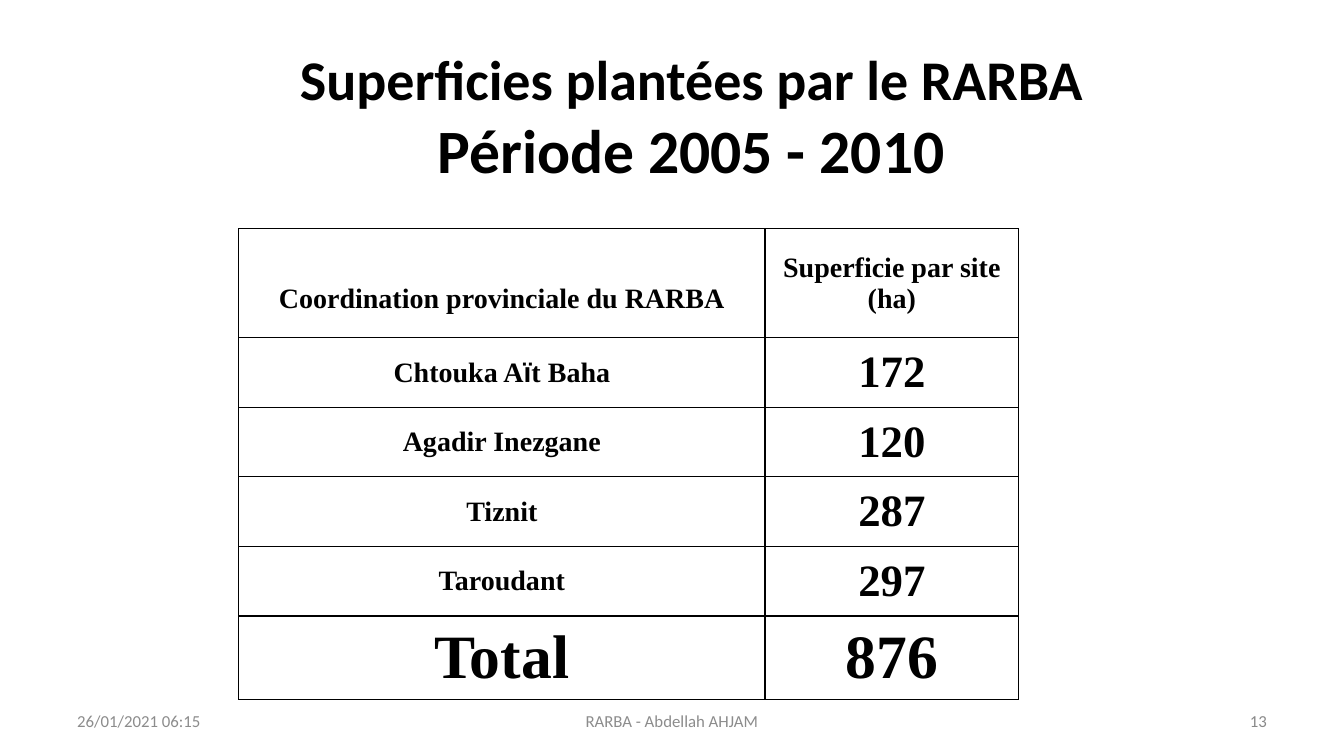
from dataclasses import dataclass

import pptx
import pptx.dml.color
import pptx.enum.text
import pptx.oxml
import pptx.oxml.ns
import pptx.slide
import pptx.table
import pptx.text.text
import pptx.util

Pt = pptx.util.Pt
RGBColor = pptx.dml.color.RGBColor
PP_ALIGN = pptx.enum.text.PP_ALIGN
MSO_ANCHOR = pptx.enum.text.MSO_ANCHOR

BLACK = RGBColor(0x00, 0x00, 0x00)
WHITE = RGBColor(0xFF, 0xFF, 0xFF)
DATE_GREY = RGBColor(0x8C, 0x8C, 0x8C)
NUMBER_GREY = RGBColor(0x89, 0x89, 0x89)

SERIF = "Times New Roman"
SANS = "Calibri"
COLUMN_WIDTHS = (375.8, 181.4)
EMPTY_LINE = 23


@dataclass
class Line:
    text: str
    size: float
    bold: bool = False
    color: RGBColor = BLACK


@dataclass
class TextBlock:
    left: float
    top: float
    width: float
    height: float
    align: PP_ALIGN
    lines: list[Line]


@dataclass
class AreaRow:
    site: str
    area: str
    site_size: float = 20
    area_size: float = 32
    height: float = 49.7


TEXT_BLOCKS = [
    TextBlock(170.6, 28.1, 646.6, 108.7, PP_ALIGN.CENTER, [
        Line("Superficies plantées par le RARBA", 40, True),
        Line("Période 2005 - 2010", 44, True),
    ]),
    TextBlock(48, 500.4, 224, 28.8, PP_ALIGN.LEFT,
              [Line("26/01/2021 06:15", 12, color=DATE_GREY)]),
    TextBlock(688, 500.4, 224, 28.8, PP_ALIGN.RIGHT,
              [Line("13", 12, color=NUMBER_GREY)]),
    TextBlock(328, 500.4, 304, 28.8, PP_ALIGN.CENTER,
              [Line("RARBA - Abdellah AHJAM", 12, color=DATE_GREY)]),
]

AREA_ROWS = [
    AreaRow("Coordination provinciale du RARBA", "Superficie par site (ha)",
            area_size=20, height=77.8),
    AreaRow("Chtouka Aït Baha", "172"),
    AreaRow("Agadir Inezgane", "120"),
    AreaRow("Tiznit", "287"),
    AreaRow("Taroudant", "297"),
    AreaRow("Total", "876", site_size=44, area_size=44, height=59.8),
]


def style_paragraph(paragraph: pptx.text.text._Paragraph, line: Line,
                    font_name: str, align: PP_ALIGN) -> None:
    paragraph.alignment = align
    paragraph.font.name = font_name
    paragraph.font.size = Pt(line.size)
    paragraph.font.bold = line.bold
    paragraph.font.color.rgb = line.color


def add_text_block(slide: pptx.slide.Slide, block: TextBlock) -> None:
    frame = slide.shapes.add_textbox(
        Pt(block.left), Pt(block.top), Pt(block.width), Pt(block.height)).text_frame
    frame.word_wrap = True
    frame.vertical_anchor = MSO_ANCHOR.MIDDLE
    for index, line in enumerate(block.lines):
        paragraph = frame.add_paragraph() if index else frame.paragraphs[0]
        paragraph.add_run().text = line.text
        style_paragraph(paragraph, line, SANS, block.align)


def add_borders(cell: pptx.table._Cell) -> None:
    """Draw a thin black line on the four sides; call before filling the cell."""
    properties = cell._tc.get_or_add_tcPr()
    for side in ("lnL", "lnR", "lnT", "lnB"):
        properties.append(pptx.oxml.parse_xml(
            f'<a:{side} {pptx.oxml.ns.nsdecls("a")} w="{Pt(1)}"><a:solidFill>'
            f'<a:srgbClr val="{BLACK}"/></a:solidFill></a:{side}>'))


def fill_cell(cell: pptx.table._Cell, line: Line) -> None:
    add_borders(cell)
    cell.fill.solid()
    cell.fill.fore_color.rgb = WHITE
    cell.vertical_anchor = MSO_ANCHOR.MIDDLE
    paragraph = cell.text_frame.paragraphs[0]
    before, accent, after = line.text.partition("ï")
    for part in filter(None, (before, accent, after)):
        run = paragraph.add_run()
        run.text = part
        if accent:
            run.font.name = "Arial" if part == accent else SERIF
    style_paragraph(paragraph, line, SERIF, PP_ALIGN.CENTER)


def add_area_table(slide: pptx.slide.Slide) -> None:
    table = slide.shapes.add_table(
        len(AREA_ROWS), len(COLUMN_WIDTHS), Pt(170.6), Pt(163.4),
        Pt(sum(COLUMN_WIDTHS)), Pt(sum(row.height for row in AREA_ROWS))).table
    table.first_row = False
    table.horz_banding = False
    for column, width in zip(table.columns, COLUMN_WIDTHS):
        column.width = Pt(width)
    for index, row in enumerate(AREA_ROWS):
        table.rows[index].height = Pt(row.height)
        fill_cell(table.cell(index, 0), Line(row.site, row.site_size, True))
        fill_cell(table.cell(index, 1), Line(row.area, row.area_size, True))
    table.cell(0, 0).margin_top = Pt(3.6 + EMPTY_LINE)


def main() -> None:
    presentation = pptx.Presentation()
    presentation.slide_width = Pt(960)
    presentation.slide_height = Pt(540)
    slide = presentation.slides.add_slide(presentation.slide_layouts[6])
    add_area_table(slide)
    for block in TEXT_BLOCKS:
        add_text_block(slide, block)
    presentation.save("out.pptx")


if __name__ == "__main__":
    main()
